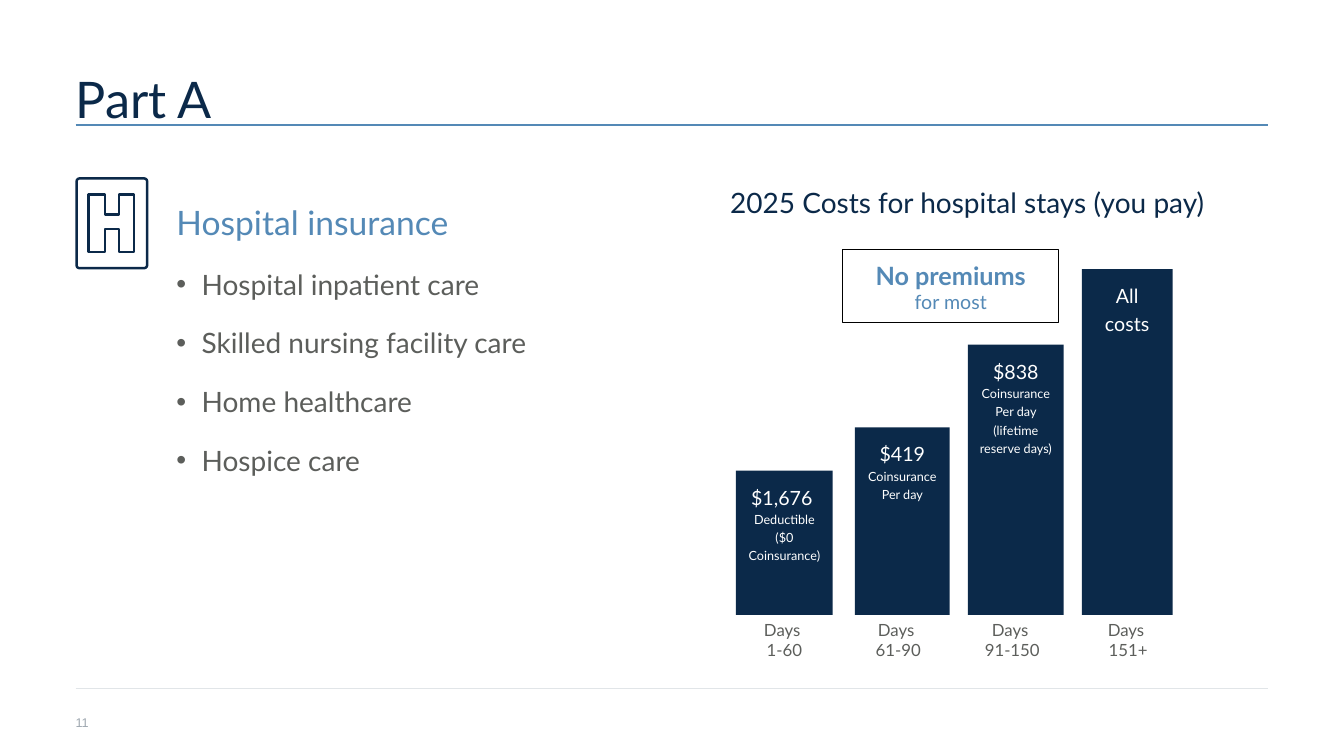
"""Build the Part A hospital insurance slide with its stepped cost bars."""
from lxml import etree
from pptx import Presentation
from pptx import util as u
from pptx.dml.color import RGBColor
from pptx.enum import shapes, text
from pptx.oxml.ns import qn

TITLE = "Part A"
SUBHEAD = "Hospital insurance"
COVERED = ["Hospital inpatient care", "Skilled nursing facility care",
           "Home healthcare", "Hospice care"]
COSTS_HEADING = "2025 Costs for hospital stays (you pay)"
PREMIUM = ("No premiums", " for most")
PAGE = "11"
STAYS = [
    {"days": "1-60", "left": 730, "top": 467, "width": 96, "label_left": 733,
     "cost": ["$1,676 ", "Deductible ($0 Coinsurance)"]},
    {"days": "61-90", "left": 848, "top": 424, "width": 94, "label_left": 846,
     "cost": ["$419", "Coinsurance Per day"]},
    {"days": "91-150", "left": 960, "top": 342, "width": 95, "label_left": 959,
     "cost": ["$838", "Coinsurance Per day (lifetime reserve days)"]},
    {"days": "151+", "left": 1073, "top": 267, "width": 90, "label_left": 1074,
     "cost": ["All costs"]},
]
BAR_BASE = 610
LABEL_TOP, LABEL_WIDTH, LABEL_HEIGHT = 615, 90, 49
MARGIN_LEFT, MARGIN_RIGHT = 75, 1258
H_OUTLINE = [(88, 193), (104, 193), (104, 213), (118, 213), (118, 193), (133, 193),
             (133, 250), (118, 250), (118, 227), (104, 227), (104, 250), (88, 250)]

THEME = {
    "font": "Lato", "page_font": "Arial",
    "navy": "0B2949", "blue": "5489B6", "gray": "5C5E5B", "white": "FFFFFF",
    "black": "000000", "rule": "E1E5E8", "page": "9EA7B0",
    "title": 36, "subhead": 24, "body": 20, "premium": 18, "cost": 14,
    "label": 12, "small": 9,
}
EMU_PER_PX = 9144


def px(length):
    return u.Emu(length * EMU_PER_PX)


def color(name):
    return RGBColor.from_string(THEME[name])


def style(font, size, ink, family="font", bold=False):
    font.name = THEME[family]
    font.size = u.Pt(THEME[size])
    font.color.rgb = color(ink)
    font.bold = bold


def set_frame(holder, lines, inset=(0, 0), anchor=text.MSO_ANCHOR.TOP, align=None):
    frame = holder.text_frame
    frame.word_wrap = True
    frame.vertical_anchor = anchor
    frame.margin_left = frame.margin_right = px(inset[0])
    frame.margin_top = frame.margin_bottom = px(inset[1])
    frame.text = "\n".join(lines)
    for paragraph in frame.paragraphs:
        paragraph.alignment = align
    return frame.paragraphs


def add_text(slide, box, lines, **layout):
    return set_frame(slide.shapes.add_textbox(*map(px, box)), lines, **layout)


def paint(shape, fill=None, line=None, weight=1):
    shape.shadow.inherit = False
    if fill:
        shape.fill.solid()
        shape.fill.fore_color.rgb = color(fill)
    else:
        shape.fill.background()
    if line:
        shape.line.color.rgb = color(line)
        shape.line.width = u.Pt(weight)
    else:
        shape.line.fill.background()
    return shape


def add_box(slide, box, kind=shapes.MSO_SHAPE.RECTANGLE, **look):
    return paint(slide.shapes.add_shape(kind, *map(px, box)), **look)


def add_rule(slide, y, ink, weight):
    rule = slide.shapes.add_connector(
        shapes.MSO_CONNECTOR.STRAIGHT, px(MARGIN_LEFT), px(y), px(MARGIN_RIGHT), px(y))
    rule.line.color.rgb = color(ink)
    rule.line.width = u.Pt(weight)
    etree.SubElement(rule._element.spPr, qn("a:effectLst"))


def add_bullet(paragraph):
    properties = paragraph._p.get_or_add_pPr()
    properties.set("marL", str(px(25)))
    properties.set("indent", str(px(-25)))
    etree.SubElement(properties, qn("a:buFont")).set("typeface", "Arial")
    etree.SubElement(properties, qn("a:buChar")).set("char", "•")


def add_coverage(slide):
    subhead, *items = add_text(slide, (175, 200, 420, 292), [SUBHEAD, *COVERED])
    style(subhead.font, "subhead", "blue")
    for item in items:
        item.space_before = u.Pt(18)
        add_bullet(item)
        style(item.font, "body", "gray")


def add_icon(slide):
    sign = add_box(slide, (76, 177, 70, 89), shapes.MSO_SHAPE.ROUNDED_RECTANGLE,
                   line="navy", weight=1.75)
    sign.adjustments[0] = 0.04
    start, *rest = H_OUTLINE
    builder = slide.shapes.build_freeform(*start, scale=EMU_PER_PX)
    builder.add_line_segments(rest, close=True)
    paint(builder.convert_to_shape(), line="navy", weight=1.75)


def add_stays(slide):
    center = text.PP_ALIGN.CENTER
    for stay in STAYS:
        label_box = (stay["label_left"], LABEL_TOP, LABEL_WIDTH, LABEL_HEIGHT)
        for line in add_text(slide, label_box, ["Days ", stay["days"]], align=center):
            style(line.font, "label", "gray")
        bar = add_box(slide, (stay["left"], stay["top"], stay["width"],
                              BAR_BASE - stay["top"]), fill="navy")
        cost_lines = set_frame(bar, stay["cost"], inset=(10, 10), align=center)
        for line, size in zip(cost_lines, ("cost", "small")):
            line.line_spacing = 1.2
            style(line.font, size, "white")


def add_premium(slide):
    note = add_box(slide, (836, 248, 214, 72), line="black", weight=0.75)
    line, = set_frame(note, PREMIUM[:1], inset=(20, 10), align=text.PP_ALIGN.CENTER)
    style(line.runs[0].font, "premium", "blue", bold=True)
    detail = line.add_run()
    detail.text = PREMIUM[1]
    style(detail.font, "cost", "blue")


def main():
    deck = Presentation()
    deck.slide_width, deck.slide_height = px(1333), px(750)
    slide = deck.slides.add_slide(deck.slide_layouts[6])
    add_rule(slide, 683, "rule", 0.5)
    title, = add_text(slide, (75, 74, 1183, 100), [TITLE])
    title.line_spacing = 0.9
    style(title.font, "title", "navy")
    add_coverage(slide)
    page, = add_text(slide, (75, 709, 30, 15), [PAGE], anchor=text.MSO_ANCHOR.BOTTOM)
    style(page.font, "small", "page", "page_font")
    heading, = add_text(slide, (681, 174, 557, 49), [COSTS_HEADING],
                        inset=(20, 10), align=text.PP_ALIGN.CENTER)
    style(heading.font, "body", "navy")
    add_stays(slide)
    add_icon(slide)
    add_premium(slide)
    add_rule(slide, 124, "blue", 1)
    deck.save("out.pptx")


if __name__ == "__main__":
    main()
